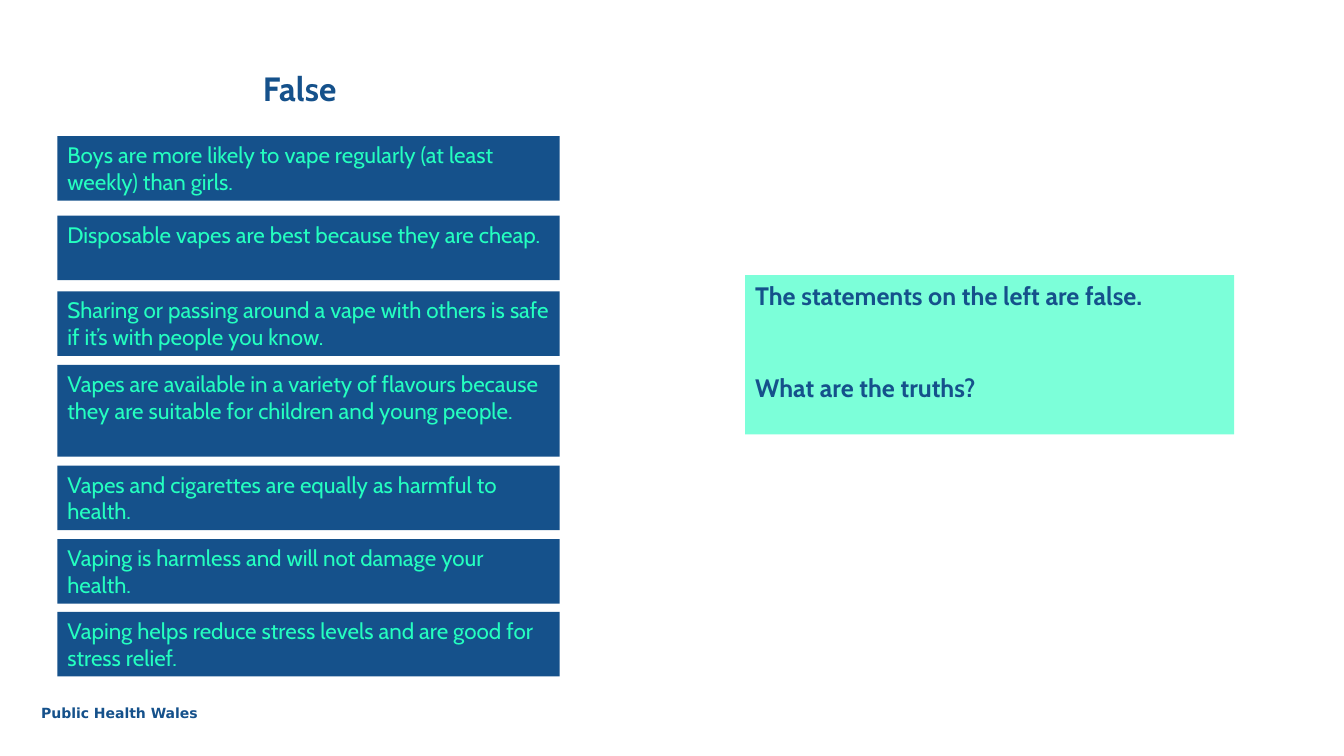
from pptx import Presentation
from pptx.dml.color import RGBColor
from pptx.enum.shapes import MSO_SHAPE
from pptx.enum.text import MSO_ANCHOR, PP_ALIGN
from pptx.util import Emu, Pt

RECTANGLE = MSO_SHAPE.RECTANGLE
LEFT = PP_ALIGN.LEFT
TOP, BOTTOM = MSO_ANCHOR.TOP, MSO_ANCHOR.BOTTOM

PX = 9144  # 100 px to the inch
NAVY, MINT, PALE_MINT = "15518B", "24FFC0", "7CFFD9"
BODY_FONT, FOOTER_FONT = "Cabin", "DejaVu Sans"

# Top and height of each statement, relative to the column
STATEMENTS = [
    (0, 64, "Boys are more likely to vape regularly (at least weekly) than girls."),
    (79, 64, "Disposable vapes are best because they are cheap."),
    (154, 64, "Sharing or passing around a vape with others is safe if it’s with people you know."),
    (227, 91, "Vapes are available in a variety of flavours because they are suitable for "
              "children and young people."),
    (327, 64, "Vapes and cigarettes are equally as harmful to health."),
    (400, 64, "Vaping is harmless and will not damage your health."),
    (472, 64, "Vaping helps reduce stress levels and are good for stress relief."),
]


def px(length):
    return Emu(length * PX)


def color(value):
    return RGBColor.from_string(value)


def write(shape, lines, size, ink, font=BODY_FONT, bold=False, anchor=TOP, gap=0):
    frame = shape.text_frame
    frame.word_wrap = True
    frame.vertical_anchor = anchor
    frame.text = "\n".join(lines)
    for index, para in enumerate(frame.paragraphs):
        para.alignment = LEFT
        if index:
            para.space_before = Pt(gap)
        for span in para.runs:
            span.font.name = font
            span.font.size = Pt(size)
            span.font.bold = bold
            span.font.color.rgb = color(ink)


def add_label(page, left, top, width, height, text, size, **style):
    box = page.shapes.add_textbox(px(left), px(top), px(width), px(height))
    write(box, [text], size, NAVY, bold=True, **style)


def add_panel(page, left, top, width, height, fill, lines, size, ink, **style):
    panel = page.shapes.add_shape(RECTANGLE, px(left), px(top), px(width), px(height))
    panel.shadow.inherit = False
    panel.fill.solid()
    panel.fill.fore_color.rgb = color(fill)
    panel.line.fill.background()
    write(panel, lines, size, ink, **style)


def add_false_column(page, left, top, width):
    # Heading above the column of statements
    add_label(page, left + 194, top - 72, 146, 49, "False", 24, anchor=BOTTOM)
    for offset, height, statement in STATEMENTS:
        add_panel(page, left, top + offset, width, height, NAVY, [statement], 16, MINT)


def add_question(page, left, top, width, height):
    lines = ["The statements on the left are false.", "What are the truths?"]
    add_panel(page, left, top, width, height, PALE_MINT, lines, 18, NAVY, bold=True, gap=44)


def add_footer(page, left, top, width, height):
    add_label(page, left, top, width, height, "Public Health Wales", 10, font=FOOTER_FONT)


def main():
    deck = Presentation()
    deck.slide_width, deck.slide_height = px(1333), px(750)
    page = deck.slides.add_slide(deck.slide_layouts[6])
    add_footer(page, 31, 694, 181, 27)
    add_false_column(page, 57, 135, 498)
    add_question(page, 739, 273, 485, 158)
    deck.save("out.pptx")


if __name__ == "__main__":
    main()
